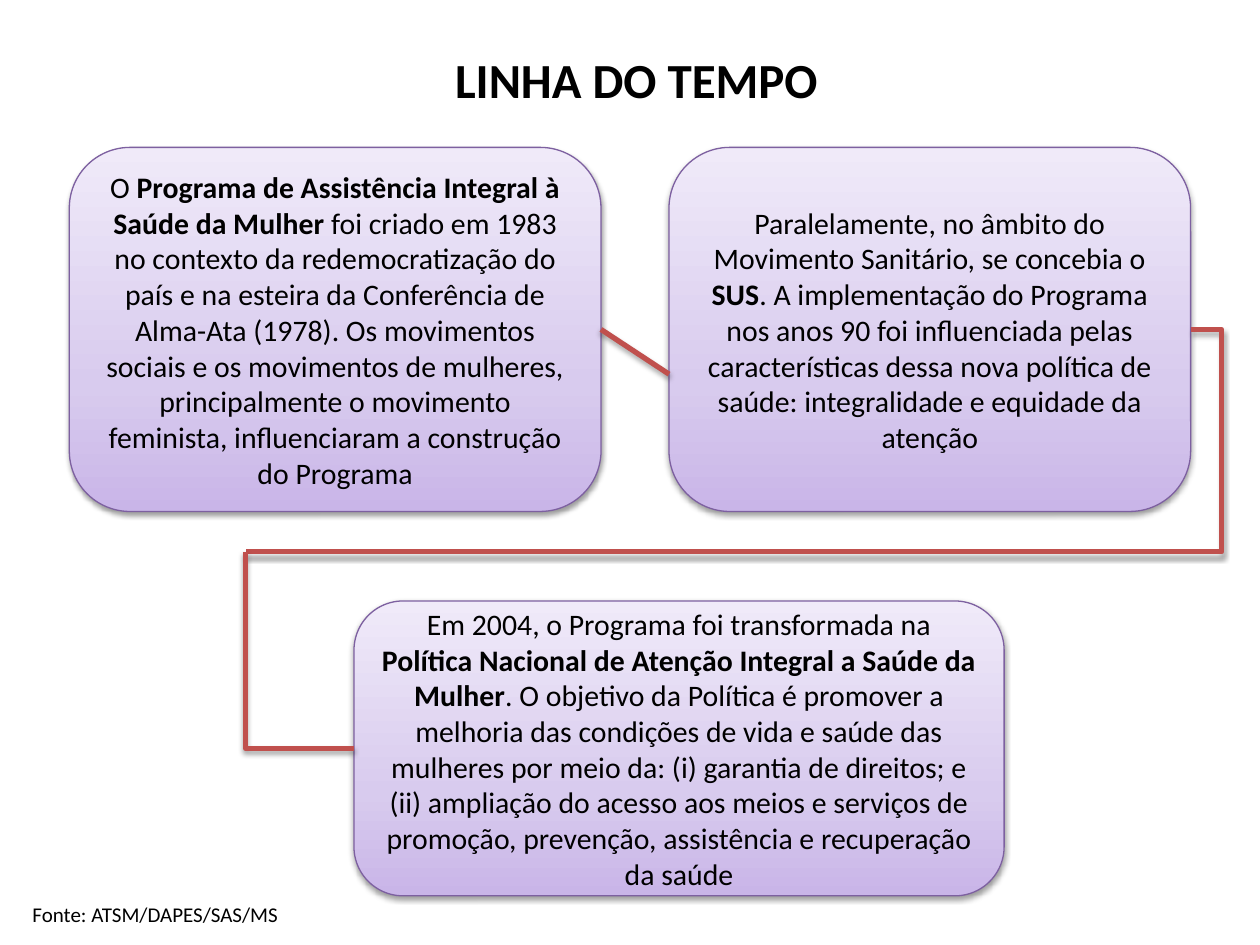
from collections import namedtuple

from lxml.etree import SubElement
from pptx import Presentation
from pptx.dml.color import RGBColor
from pptx.enum.shapes import MSO_CONNECTOR, MSO_SHAPE
from pptx.enum.text import MSO_ANCHOR, PP_ALIGN
from pptx.oxml.ns import qn
from pptx.util import Inches, Pt

BLACK = RGBColor(0x00, 0x00, 0x00)
PURPLE = RGBColor(0x7D, 0x60, 0xA0)
RED = RGBColor(0xC0, 0x50, 0x4D)
LAVENDER = RGBColor(0xC9, 0xB5, 0xE8)
LILAC = RGBColor(0xD8, 0xCB, 0xEE)
PALE = RGBColor(0xF0, 0xEA, 0xF9)
CARD_STOPS = [(0, LAVENDER), (35, LILAC), (100, PALE)]
FONT = "Calibri"

SLIDE_WIDTH, SLIDE_HEIGHT = Inches(10), Inches(7.5)
COLUMN, ROW = SLIDE_WIDTH / 100, SLIDE_HEIGHT / 100

Box = namedtuple("Box", "left top width height")
TITLE = Box(5.5, 0, 90, 16.67)
PROGRAM = Box(5.5, 15.6, 42.2, 38.53)
MOVEMENT = Box(53.1, 15.6, 41.4, 38.53)
POLICY = Box(28.1, 63.6, 51.6, 31.2)
SOURCE = Box(1.6, 94.8, 41.4, 4)

PROGRAM_TEXT = [
    ("O ", False),
    ("Programa de Assistência Integral à Saúde da Mulher ", True),
    ("foi criado em 1983 no contexto da redemocratização do país e na esteira da "
     "Conferência de Alma-Ata (1978). Os movimentos sociais e os movimentos de "
     "mulheres, principalmente o movimento feminista, influenciaram a construção "
     "do Programa", False),
]
MOVEMENT_TEXT = [
    ("Paralelamente, no âmbito do Movimento Sanitário, se concebia o ", False),
    ("SUS", True),
    (". A implementação do Programa nos anos 90 foi influenciada pelas "
     "características dessa nova política de saúde: integralidade e equidade da "
     "atenção", False),
]
POLICY_TEXT = [
    ("Em 2004, o Programa foi transformada na ", False),
    ("Política Nacional de Atenção Integral a Saúde da Mulher", True),
    (". O objetivo da Política é promover a melhoria das condições de vida e saúde "
     "das mulheres por meio da: (i) garantia de direitos; e (ii) ampliação do acesso "
     "aos meios e serviços de promoção, prevenção, assistência e recuperação da "
     "saúde", False),
]


def place(box):
    return (round(box.left * COLUMN), round(box.top * ROW),
            round(box.width * COLUMN), round(box.height * ROW))


def left_middle(box):
    return box.left, box.top + box.height / 2


def right_middle(box):
    return box.left + box.width, box.top + box.height / 2


def set_font(para, size, bold=None):
    para.font.name = FONT
    para.font.size = Pt(size)
    para.font.bold = bold
    para.font.color.rgb = BLACK


def add_color(parent, color, opacity=None):
    element = SubElement(parent, qn("a:srgbClr"), val=str(color))
    if opacity is not None:
        SubElement(element, qn("a:alpha"), val=str(opacity * 1000))


def add_shadow(properties, distance, opacity):
    effects = properties.find(qn("a:effectLst"))
    if effects is None:
        effects = SubElement(properties, qn("a:effectLst"))
    shadow = SubElement(effects, qn("a:outerShdw"), blurRad=str(Pt(3.1)),
                        dist=str(Pt(distance)), dir="5400000", rotWithShape="0")
    add_color(shadow, BLACK, opacity)


def fill_gradient(shape, stops):
    shape.fill.gradient()
    gradient = shape._element.spPr.find(qn("a:gradFill"))
    for child in list(gradient):
        gradient.remove(child)
    stop_list = SubElement(gradient, qn("a:gsLst"))
    for position, color in stops:
        stop = SubElement(stop_list, qn("a:gs"), pos=str(position * 1000))
        add_color(stop, color)
    SubElement(gradient, qn("a:lin"), ang="16200000", scaled="0")


def add_title(page, box, text):
    title = page.shapes.title
    title.left, title.top, title.width, title.height = place(box)
    title.text_frame.vertical_anchor = MSO_ANCHOR.MIDDLE
    para = title.text_frame.paragraphs[0]
    para.text = text
    para.alignment = PP_ALIGN.CENTER
    set_font(para, 28, True)


def add_card(page, box, spans):
    card = page.shapes.add_shape(MSO_SHAPE.ROUNDED_RECTANGLE, *place(box))
    card.shadow.inherit = False
    fill_gradient(card, CARD_STOPS)
    card.line.color.rgb = PURPLE
    card.line.width = Pt(0.75)
    add_shadow(card._element.spPr, 1.6, 38)
    card.text_frame.word_wrap = True
    card.text_frame.vertical_anchor = MSO_ANCHOR.MIDDLE
    para = card.text_frame.paragraphs[0]
    para.alignment = PP_ALIGN.CENTER
    set_font(para, 17)
    for text, bold in spans:
        span = para.add_run()
        span.text = text
        span.font.bold = bold


def add_link(page, start, end, bend_column=None):
    kind = MSO_CONNECTOR.STRAIGHT if bend_column is None else MSO_CONNECTOR.ELBOW
    points = [round(value * unit) for point in (start, end)
              for value, unit in zip(point, (COLUMN, ROW))]
    link = page.shapes.add_connector(kind, *points)
    link.line.color.rgb = RED
    link.line.width = Pt(3)
    properties = link._element.spPr
    add_shadow(properties, 1.8, 35)
    if bend_column is not None:
        share = (bend_column - start[0]) / (end[0] - start[0])
        geometry = properties.find(qn("a:prstGeom"))
        adjustments = geometry.find(qn("a:avLst"))
        if adjustments is None:
            adjustments = SubElement(geometry, qn("a:avLst"))
        SubElement(adjustments, qn("a:gd"), name="adj1",
                   fmla=f"val {round(share * 100000)}")


def add_source(page, box, text):
    note = page.shapes.add_textbox(*place(box))
    note.text_frame.word_wrap = True
    para = note.text_frame.paragraphs[0]
    para.text = text
    set_font(para, 12)


def main():
    deck = Presentation()
    deck.slide_width, deck.slide_height = SLIDE_WIDTH, SLIDE_HEIGHT
    page = deck.slides.add_slide(deck.slide_layouts[5])
    add_title(page, TITLE, "LINHA DO TEMPO")
    add_card(page, PROGRAM, PROGRAM_TEXT)
    add_card(page, POLICY, POLICY_TEXT)
    add_card(page, MOVEMENT, MOVEMENT_TEXT)
    turn = (19.5, 58.4)
    add_link(page, right_middle(PROGRAM), (MOVEMENT.left, 39.6))
    add_link(page, right_middle(MOVEMENT), turn, 97)
    add_link(page, turn, left_middle(POLICY), turn[0])
    add_source(page, SOURCE, "Fonte: ATSM/DAPES/SAS/MS")
    deck.save("out.pptx")


if __name__ == "__main__":
    main()
